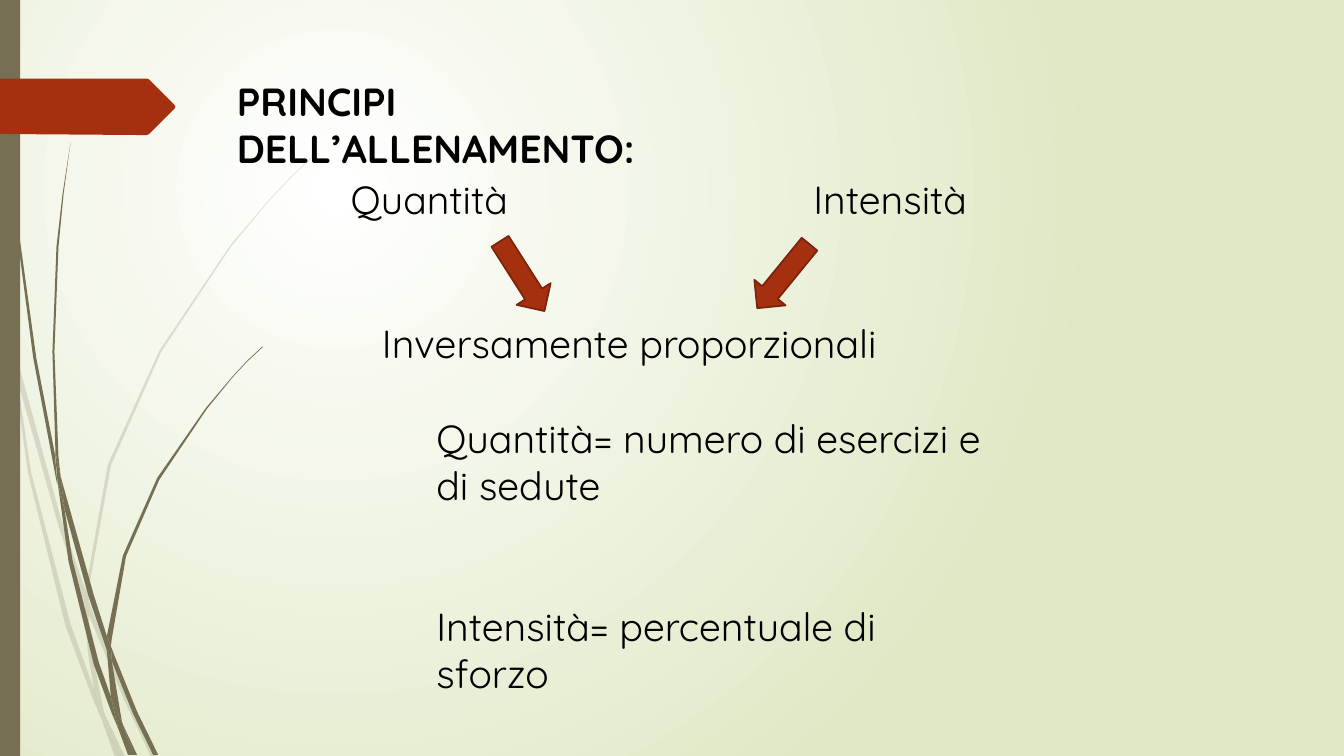
from pptx import Presentation
from pptx.dml.color import RGBColor
from pptx.enum.shapes import MSO_SHAPE
from pptx.enum.text import MSO_AUTO_SIZE
from pptx.oxml import parse_xml
from pptx.oxml.ns import nsdecls, qn
from pptx.util import Pt

PX = 9144  # one px is a hundredth of an inch
THEME = {
    "grass": RGBColor.from_string("766F54"),
    "accent": RGBColor.from_string("A53010"),
    "accent_line": RGBColor.from_string("7A240C"),
    "text": RGBColor.from_string("000000"),
    "glow": [RGBColor.from_string("FFFFFF"), RGBColor.from_string("DFE8C4")],
    "font": "Quicksand",
    "size": Pt(28),
    "line_width": Pt(1.25),
    "pale_alpha": 20000,
}

# Outline points of each grass segment
PALE_GRASS = [
    [(11, 350), (9, 322), (0, 282), (0, 299), (10, 344)],
    [(58, 522), (84, 599), (85, 586), (62, 520), (14, 345), (17, 376)],
    [(92, 607), (88, 596), (88, 610), (123, 694), (150, 751), (155, 751),
     (127, 692)],
    [(119, 751), (124, 751), (105, 711)],
    [(93, 683), (70, 619), (31, 469), (17, 376), (11, 350), (28, 470),
     (65, 621), (92, 693), (101, 714), (99, 707)],
    [(84, 599), (87, 646), (93, 683), (96, 692), (105, 711), (103, 706),
     (91, 646), (88, 610), (88, 608)],
    [(88, 584), (110, 462), (160, 349), (229, 245), (268, 198), (290, 175),
     (312, 154), (312, 153), (289, 175), (268, 197), (228, 244), (158, 348),
     (107, 461), (85, 584), (85, 586), (88, 596)],
    [(101, 714), (114, 751), (119, 751)],
    [(88, 608), (88, 610), (88, 596), (85, 586), (84, 599)],
    [(96, 692), (93, 683), (99, 707), (101, 714), (119, 751), (105, 711)],
]
DARK_GRASS = [
    [(7, 110), (17, 233), (33, 355), (56, 477), (57, 481), (55, 457),
     (55, 453), (36, 355), (19, 232), (8, 109), (5, 48), (4, 0), (3, 0),
     (4, 48)],
    [(88, 592), (106, 645), (106, 631), (93, 590), (60, 472), (64, 505)],
    [(113, 649), (110, 641), (111, 656), (132, 708), (152, 749), (157, 749),
     (136, 706)],
    [(110, 691), (98, 657), (72, 556), (64, 505), (57, 477), (68, 557),
     (93, 659), (111, 708), (117, 722), (116, 717)],
    [(60, 472), (58, 453), (54, 349), (58, 245), (63, 193), (70, 141),
     (62, 193), (56, 245), (52, 349), (55, 449)],
    [(133, 749), (136, 749), (122, 719)],
    [(57, 477), (64, 505), (60, 472), (55, 449), (55, 453)],
    [(111, 633), (125, 552), (158, 476), (205, 406), (231, 374), (245, 359),
     (261, 344), (260, 344), (245, 358), (231, 373), (204, 405), (156, 474),
     (122, 551), (106, 631), (110, 641)],
    [(117, 722), (127, 749), (131, 749)],
    [(106, 645), (110, 691), (116, 706), (122, 719), (121, 716), (111, 656),
     (109, 651)],
    [(106, 645), (109, 651), (111, 656), (110, 641), (106, 631)],
    [(116, 706), (110, 691), (116, 717), (117, 722), (130, 749), (133, 749),
     (122, 719)],
]
PENNANT = [(173, 108), (148, 133), (146, 134), (136, 134), (0, 133), (0, 78),
           (136, 78), (146, 78), (148, 79), (173, 104), (174, 106)]


def add_outline(shapes, points, color):
    """Add a closed, unlined shape through the given px points."""
    builder = shapes.build_freeform(*points[0], scale=PX)
    builder.add_line_segments(points[1:], close=True)
    shape = builder.convert_to_shape()
    shape.shadow.inherit = False
    shape.fill.solid()
    shape.fill.fore_color.rgb = color
    shape.line.fill.background()
    return shape


def add_preset(shapes, preset, box, color):
    shape = shapes.add_shape(preset, *[length * PX for length in box])
    shape.shadow.inherit = False
    shape.fill.solid()
    shape.fill.fore_color.rgb = color
    return shape


presentation = Presentation()
presentation.slide_width = 1333 * PX
presentation.slide_height = 750 * PX
slide = presentation.slides.add_slide(presentation.slide_layouts[6])

# Radial background
background = slide.background.fill
background.gradient()
for stop, color in zip(background.gradient_stops, THEME["glow"]):
    stop.color.rgb = color
gradient = slide.element.find(".//" + qn("a:gradFill"))
gradient.replace(gradient.find(qn("a:lin")), parse_xml(
    f'<a:path {nsdecls("a")} path="circle">'
    '<a:fillToRect l="50000" t="50000" r="100000" b="100000"/></a:path>'))

# Grass, edge bar and pennant
for segments, alpha in [(PALE_GRASS, THEME["pale_alpha"]), (DARK_GRASS, None)]:
    grass = slide.shapes.add_group_shape()
    for points in segments:
        segment = add_outline(grass.shapes, points, THEME["grass"])
        if alpha:
            color = segment.element.spPr.find(".//" + qn("a:srgbClr"))
            color.append(parse_xml(f'<a:alpha {nsdecls("a")} val="{alpha}"/>'))

edge_bar = add_preset(slide.shapes, MSO_SHAPE.RECTANGLE, (0, 0, 20, 750),
                      THEME["grass"])
edge_bar.line.fill.background()
add_outline(slide.shapes, PENNANT, THEME["accent"])

# Arrows towards the shared statement
for left, rotation in [(498, 327.5), (757, 39.2)]:
    arrow = add_preset(slide.shapes, MSO_SHAPE.DOWN_ARROW, (left, 233, 40, 82),
                       THEME["accent"])
    arrow.rotation = rotation
    arrow.line.color.rgb = THEME["accent_line"]
    arrow.line.width = THEME["line_width"]

# Texts
TEXTS = [
    ((225, 72, 572, 57), True, ["PRINCIPI DELL’ALLENAMENTO:"]),
    ((338, 169, 193, 57), False, ["Quantità"]),
    ((369, 312, 781, 57), False, ["Inversamente proporzionali"]),
    ((797, 169, 193, 57), False, ["Intensità"]),
    ((423, 406, 567, 293), False, ["Quantità= numero di esercizi e di sedute",
                                   "Intensità= percentuale di sforzo"]),
]
for box, bold, lines in TEXTS:
    text_box = slide.shapes.add_textbox(*[length * PX for length in box])
    frame = text_box.text_frame
    frame.word_wrap = True
    frame.auto_size = MSO_AUTO_SIZE.SHAPE_TO_FIT_TEXT
    frame.text = "\n".join(lines)
    for index, paragraph in enumerate(frame.paragraphs):
        paragraph.space_before = Pt(67 * index)
        font = paragraph.runs[0].font
        font.color.rgb = THEME["text"]
        for name, value in {"name": THEME["font"], "size": THEME["size"],
                            "bold": bold}.items():
            setattr(font, name, value)

presentation.save("out.pptx")
